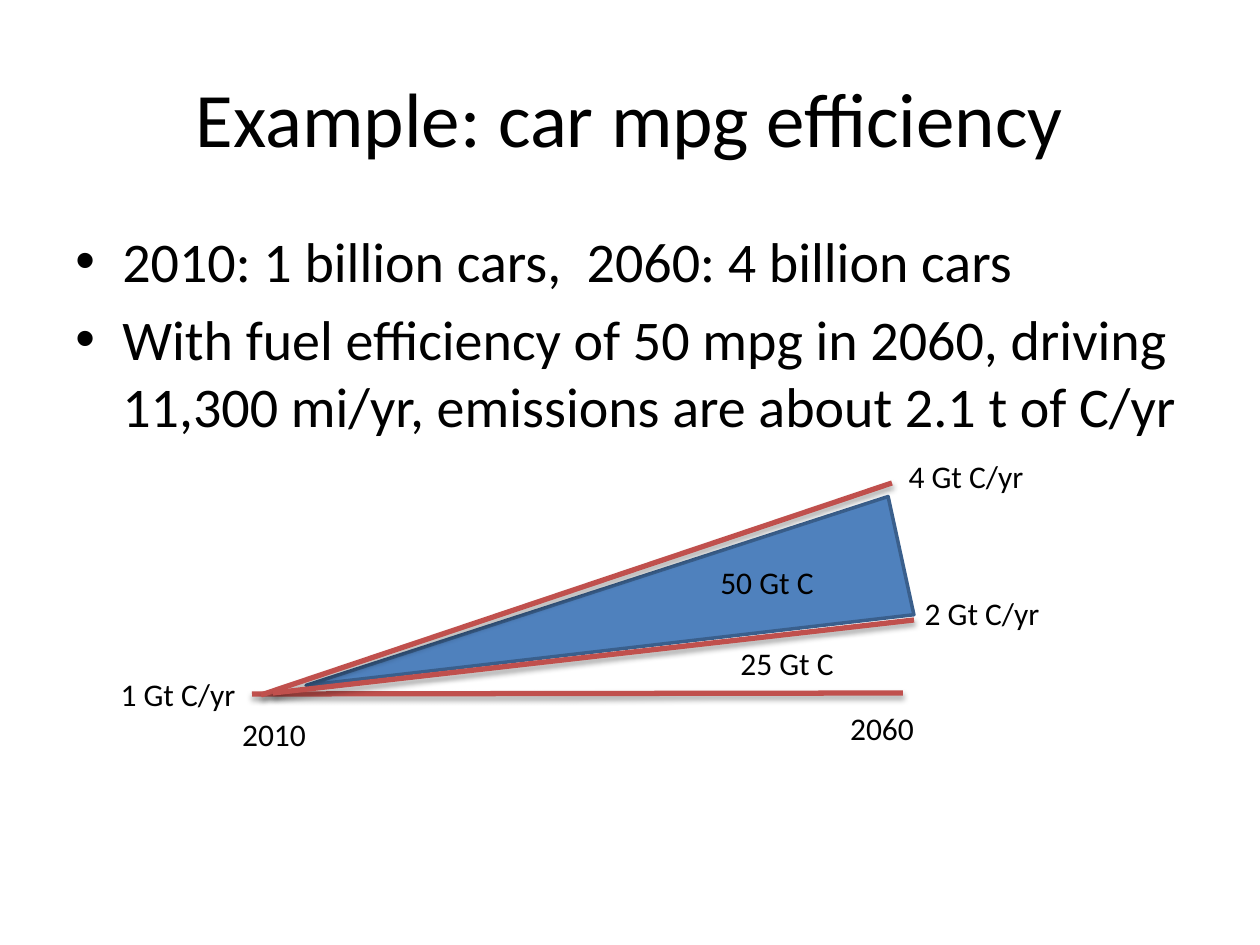
from dataclasses import dataclass

from lxml import etree
from pptx import Presentation
from pptx.dml.color import RGBColor as RGB
from pptx.enum.shapes import MSO_CONNECTOR as Conn, MSO_SHAPE as Kind
from pptx.enum.text import MSO_ANCHOR as Anchor, PP_ALIGN as Align
from pptx.oxml import parse_xml
from pptx.util import Pt

SCALE = 914400 / 126  # EMU in one px
NS = "http://schemas.openxmlformats.org/drawingml/2006/main"


@dataclass(frozen=True)
class Theme:
    font: str = "Calibri"
    ink: RGB = RGB(0x00, 0x00, 0x00)
    wedge: RGB = RGB(0x4F, 0x81, 0xBD)
    edge: RGB = RGB(0x3A, 0x5F, 0x8C)
    trend: RGB = RGB(0xC0, 0x50, 0x4D)
    title: int = 44
    body: int = 32
    label: int = 18


THEME = Theme()


def px(*vals):
    return [round(v * SCALE) for v in vals]


def add_text(slide, box, lines, size, align=Align.CENTER, anchor=Anchor.TOP):
    """Add a text box with one paragraph for each line."""
    frame = slide.shapes.add_textbox(*px(*box)).text_frame
    frame.word_wrap = True
    frame.vertical_anchor = anchor
    frame.text = "\n".join(lines)
    for para in frame.paragraphs:
        para.alignment = align
        for run in para.runs:
            run.font.name = THEME.font
            run.font.size = Pt(size)
            run.font.color.rgb = THEME.ink
    return frame


def add_list(slide, box, lines):
    frame = add_text(slide, box, lines, THEME.body, Align.LEFT)
    dent = px(47)[0]
    for para in frame.paragraphs:
        props = para._p.get_or_add_pPr()
        props.set("marL", str(dent))
        props.set("indent", str(-dent))
        gap = etree.SubElement(props, f"{{{NS}}}spcBef")
        etree.SubElement(gap, f"{{{NS}}}spcPct", val="20000")
        etree.SubElement(props, f"{{{NS}}}buFont", typeface="Arial")
        etree.SubElement(props, f"{{{NS}}}buChar", char="•")


def add_wedge(slide, box, turn):
    shape = slide.shapes.add_shape(Kind.ISOSCELES_TRIANGLE, *px(*box))
    shape.rotation = turn
    shape.shadow.inherit = False
    shape.fill.solid()
    shape.fill.fore_color.rgb = THEME.wedge
    shape.line.color.rgb = THEME.edge
    shape.line.width = Pt(2)


def add_trend(slide, ends):
    """Add a straight line with a soft shadow below it."""
    line = slide.shapes.add_connector(Conn.STRAIGHT, *px(*ends))
    line.line.color.rgb = THEME.trend
    line.line.width = Pt(3)
    line._element.spPr.append(parse_xml(
        f'<a:effectLst xmlns:a="{NS}">'
        f'<a:outerShdw blurRad="{Pt(3.1)}" dist="{Pt(1.8)}" dir="5400000" rotWithShape="0">'
        '<a:srgbClr val="000000"><a:alpha val="35000"/></a:srgbClr>'
        '</a:outerShdw></a:effectLst>'))


def main():
    deck = Presentation()
    deck.slide_width, deck.slide_height = px(1260, 945)
    slide = deck.slides.add_slide(deck.slide_layouts[6])

    # Wedge of avoided emissions
    add_wedge(slide, (543, 316, 121, 609), 257.7)

    # Title and key figures
    add_text(slide, (63, 38, 1134, 158), ["Example: car mpg efficiency"],
             THEME.title, anchor=Anchor.MIDDLE)
    add_list(slide, (63, 220, 1134, 556), [
        "2010: 1 billion cars,  2060: 4 billion cars",
        "With fuel efficiency of 50 mpg in 2060, driving 11,300 mi/yr, "
        "emissions are about 2.1 t of C/yr",
    ])

    # Emission paths: flat, unchanged mpg, 50 mpg
    for ends in ((252, 694, 903, 693), (261, 695, 892, 483), (273, 693, 914, 620)):
        add_trend(slide, ends)

    # Labels: left, top, width, text
    for left, top, width, text in (
        (620, 557, 294, "50 Gt C"),
        (640, 638, 294, "25 Gt C"),
        (94, 669, 168, "1 Gt C/yr"),
        (882, 451, 168, "4 Gt C/yr"),
        (898, 588, 168, "2 Gt C/yr"),
        (190, 709, 168, "2010"),
        (798, 703, 168, "2060"),
    ):
        add_text(slide, (left, top, width, 50), [text], THEME.label)

    deck.save("out.pptx")


if __name__ == "__main__":
    main()
